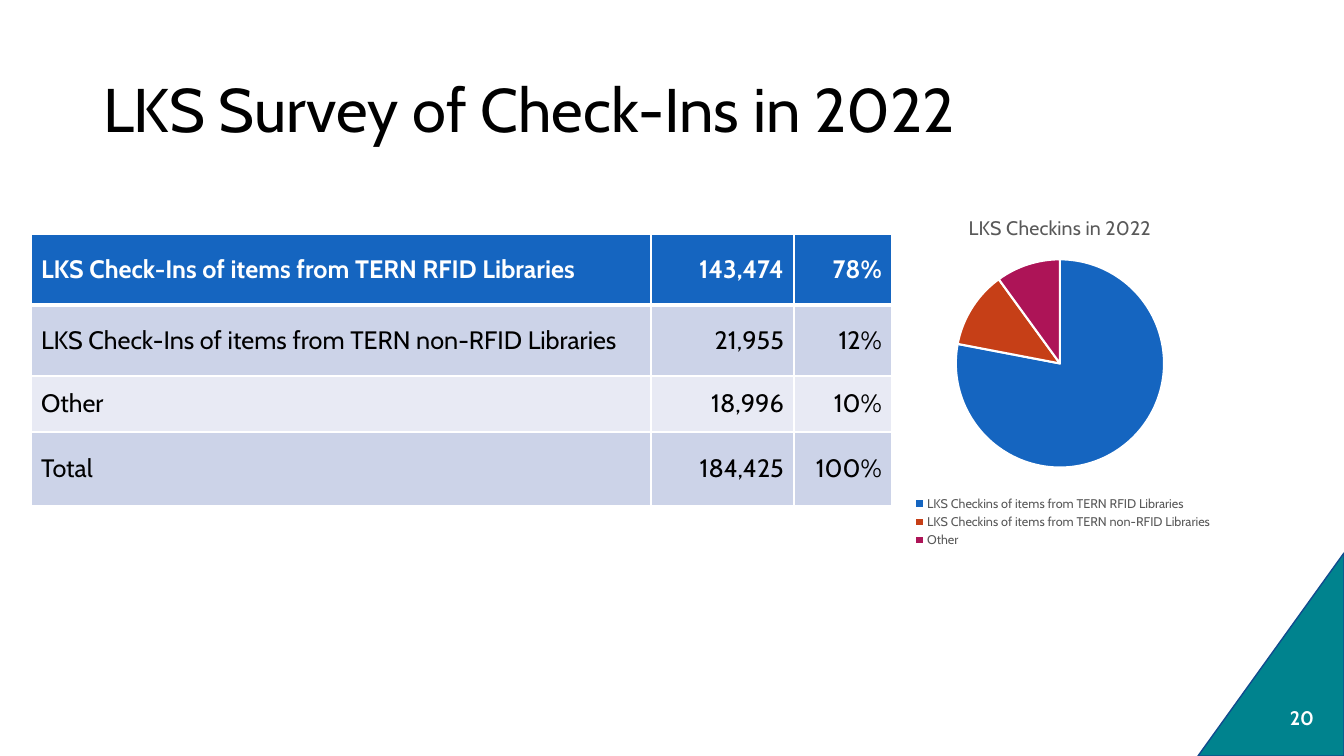
"""Build the slide with the check-in survey table and pie chart."""
from dataclasses import dataclass

import lxml.etree
import pptx
import pptx.chart.data
import pptx.dml.color
import pptx.enum.chart
import pptx.enum.shapes
import pptx.enum.text
import pptx.oxml
import pptx.oxml.ns
import pptx.util

EMU_PER_PX = 914400 / 100.8
ALIGN = pptx.enum.text.PP_ALIGN
MIDDLE = pptx.enum.text.MSO_ANCHOR.MIDDLE

ROWS = [
    ("LKS Check-Ins of items from TERN RFID Libraries", "143,474", "78%"),
    ("LKS Check-Ins of items from TERN non-RFID Libraries", "21,955", "12%"),
    ("Other", "18,996", "10%"),
    ("Total", "184,425", "100%"),
]
SHARES = {
    "LKS Checkins of items from TERN RFID Libraries": 78,
    "LKS Checkins of items from TERN non-RFID Libraries": 12,
    "Other": 10,
}


@dataclass(frozen=True)
class Theme:
    font: str = "Cabin"
    text: str = "000000"
    white: str = "FFFFFF"
    muted: str = "595959"
    corner: str = "00838E"
    corner_line: str = "104B8E"
    header: str = "1565C0"
    bands: tuple = ("E8EAF4", "CCD3E8")
    slices: tuple = ("1565C0", "C63F17", "AD1457")
    title_size: int = 44
    table_size: int = 18
    number_size: int = 14
    chart_title_size: int = 14
    legend_size: int = 9


THEME = Theme()


def px(n):
    return pptx.util.Emu(round(n * EMU_PER_PX))


def rgb(color):
    return pptx.dml.color.RGBColor.from_string(color)


def paint(fill, color):
    fill.solid()
    fill.fore_color.rgb = rgb(color)


def style_font(font, size, color, bold=False):
    font.name = THEME.font
    font.size = pptx.util.Pt(size)
    font.bold = bold
    font.color.rgb = rgb(color)


def set_text(tf, text, size, color, align=ALIGN.LEFT, bold=False):
    tf.text = text
    p = tf.paragraphs[0]
    p.alignment = align
    style_font(p.runs[0].font, size, color, bold)
    return p


def add_title(s, text, x, y, w, h):
    sp = s.shapes.title
    sp.left, sp.top, sp.width, sp.height = px(x), px(y), px(w), px(h)
    tf = sp.text_frame
    tf.vertical_anchor = MIDDLE
    p = set_text(tf, text, THEME.title_size, THEME.text)
    p.line_spacing = 0.9


def add_corner(s, x, y, w, h):
    sp = s.shapes.add_shape(
        pptx.enum.shapes.MSO_SHAPE.RIGHT_TRIANGLE, px(x), px(y), px(w), px(h))
    sp.shadow.inherit = False
    sp._element.spPr.xfrm.set("flipH", "1")
    paint(sp.fill, THEME.corner)
    sp.line.color.rgb = rgb(THEME.corner_line)
    sp.line.width = pptx.util.Pt(1)


def add_slide_number(s, text, x, y, w, h):
    tf = s.shapes.add_textbox(px(x), px(y), px(w), px(h)).text_frame
    tf.word_wrap = True
    tf.vertical_anchor = MIDDLE
    set_text(tf, text, THEME.number_size, THEME.white, ALIGN.CENTER, True)


def set_borders(cell, header, below_header):
    """Draw white cell edges, thick where the header meets the body."""
    tc_pr = cell._tc.get_or_add_tcPr()
    thick = {"lnB": header, "lnT": below_header}
    for i, side in enumerate(("lnL", "lnR", "lnT", "lnB")):
        width = pptx.util.Pt(3 if thick.get(side) else 1)
        ln = pptx.oxml.parse_xml(
            f'<a:{side} {pptx.oxml.ns.nsdecls("a")} w="{width}"><a:solidFill>'
            f'<a:srgbClr val="{THEME.white}"/></a:solidFill></a:{side}>')
        tc_pr.insert(i, ln)


def add_table(s, rows, x, y, widths, heights):
    table = s.shapes.add_table(
        len(rows), len(widths), px(x), px(y),
        px(sum(widths)), px(sum(heights))).table
    for column, width in zip(table.columns, widths):
        column.width = px(width)
    for r, (values, height) in enumerate(zip(rows, heights)):
        table.rows[r].height = px(height)
        header = r == 0
        for c, value in enumerate(values):
            cell = table.cell(r, c)
            cell.vertical_anchor = MIDDLE
            set_text(cell.text_frame, value, THEME.table_size,
                     THEME.white if header else THEME.text,
                     ALIGN.RIGHT if c else ALIGN.LEFT, header)
            paint(cell.fill, THEME.header if header else THEME.bands[r % 2])
            set_borders(cell, header, r == 1)


def set_layout(element, x, y, w, h, inner=False):
    """Place a chart part by fractions of the chart frame."""
    target = '<c:layoutTarget val="inner"/>' if inner else ""
    values = "".join(f'<c:{tag} val="{value}"/>' for tag, value in
                     zip("xywh", (x, y, w, h)))
    layout = pptx.oxml.parse_xml(
        f'<c:layout {pptx.oxml.ns.nsdecls("c")}><c:manualLayout>{target}'
        f'<c:xMode val="edge"/><c:yMode val="edge"/>{values}'
        '</c:manualLayout></c:layout>')
    for old in element.findall(pptx.oxml.ns.qn("c:layout")):
        element.remove(old)
    legend_pos = element.find(pptx.oxml.ns.qn("c:legendPos"))
    element.insert(0 if legend_pos is None else 1, layout)


def add_pie(s, title, shares, x, y, w, h):
    data = pptx.chart.data.CategoryChartData()
    data.categories = list(shares)
    data.add_series("Series 1", list(shares.values()))
    chart = s.shapes.add_chart(
        pptx.enum.chart.XL_CHART_TYPE.PIE,
        px(x), px(y), px(w), px(h), data).chart
    chart.has_title = True
    set_text(chart.chart_title.text_frame, title,
             THEME.chart_title_size, THEME.muted, ALIGN.CENTER)
    chart.has_legend = True
    chart.legend.position = pptx.enum.chart.XL_LEGEND_POSITION.BOTTOM
    chart.legend.include_in_layout = False
    style_font(chart.legend.font, THEME.legend_size, THEME.muted)
    for i, color in enumerate(THEME.slices):
        fmt = chart.plots[0].series[0].points[i].format
        paint(fmt.fill, color)
        fmt.line.color.rgb = rgb(THEME.white)
        fmt.line.width = pptx.util.Pt(1.5)
    plot_area = chart._chartSpace.chart.plotArea
    set_layout(plot_area, 0.31, 0.17, 0.38, 0.59, inner=True)
    set_layout(chart.legend._element, 0.22, 0.83, 0.57, 0.16)


def main():
    prs = pptx.Presentation()
    prs.slide_width, prs.slide_height = px(1344), px(756)
    s = prs.slides.add_slide(prs.slide_layouts[5])
    add_corner(s, 1198, 553, 146, 203)
    add_title(s, "LKS Survey of Check-Ins in 2022", 93, 40, 1159, 146)
    add_table(s, ROWS, 31, 234, (620, 143, 98), (71, 71, 56, 74))
    add_slide_number(s, "20", 1273, 698, 58, 40)
    add_pie(s, "LKS Checkins in 2022", SHARES, 786, 198, 548, 356)
    prs.save("out.pptx")


if __name__ == "__main__":
    main()
